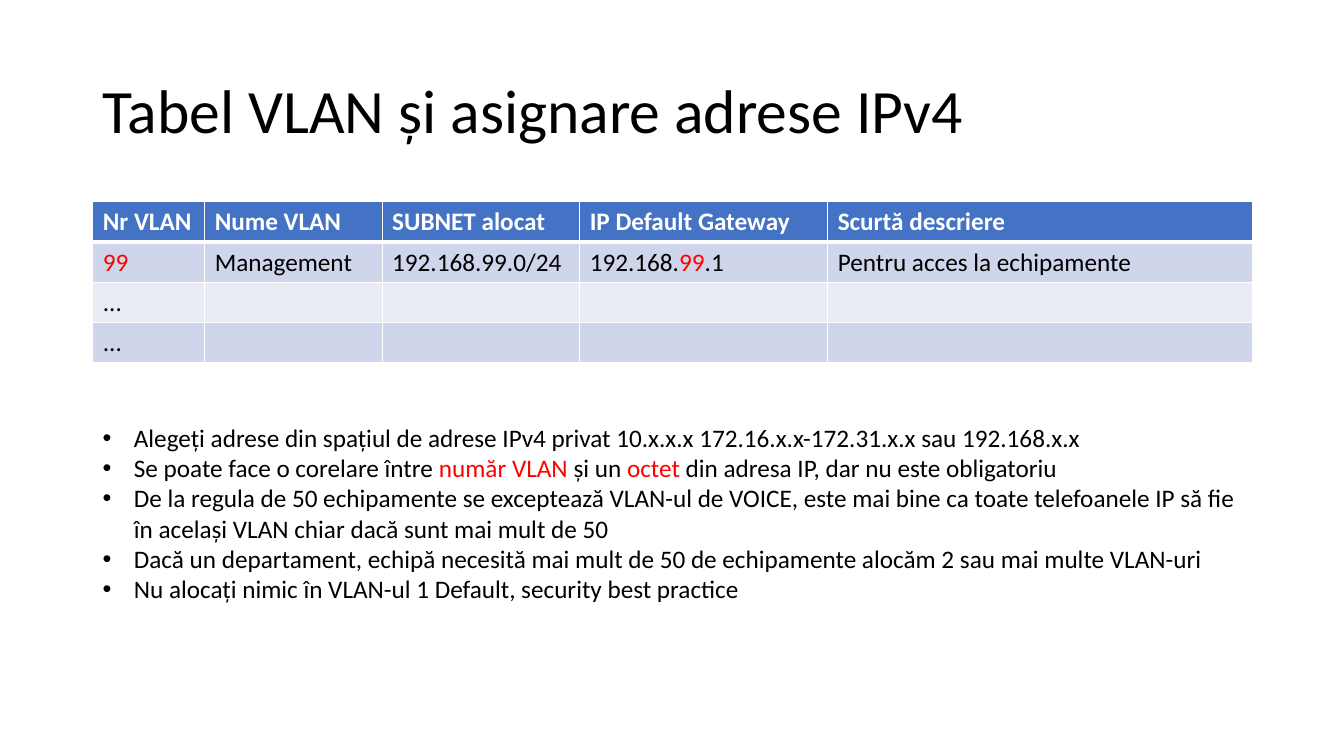
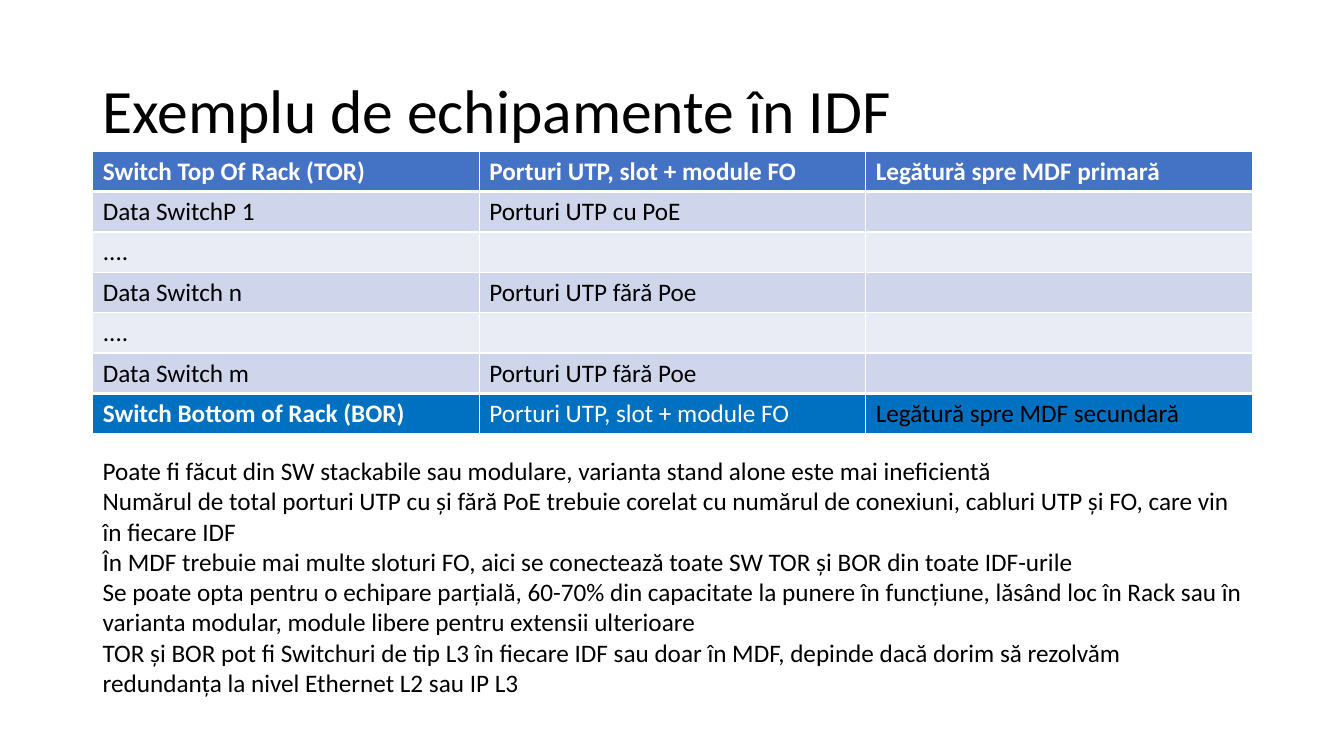
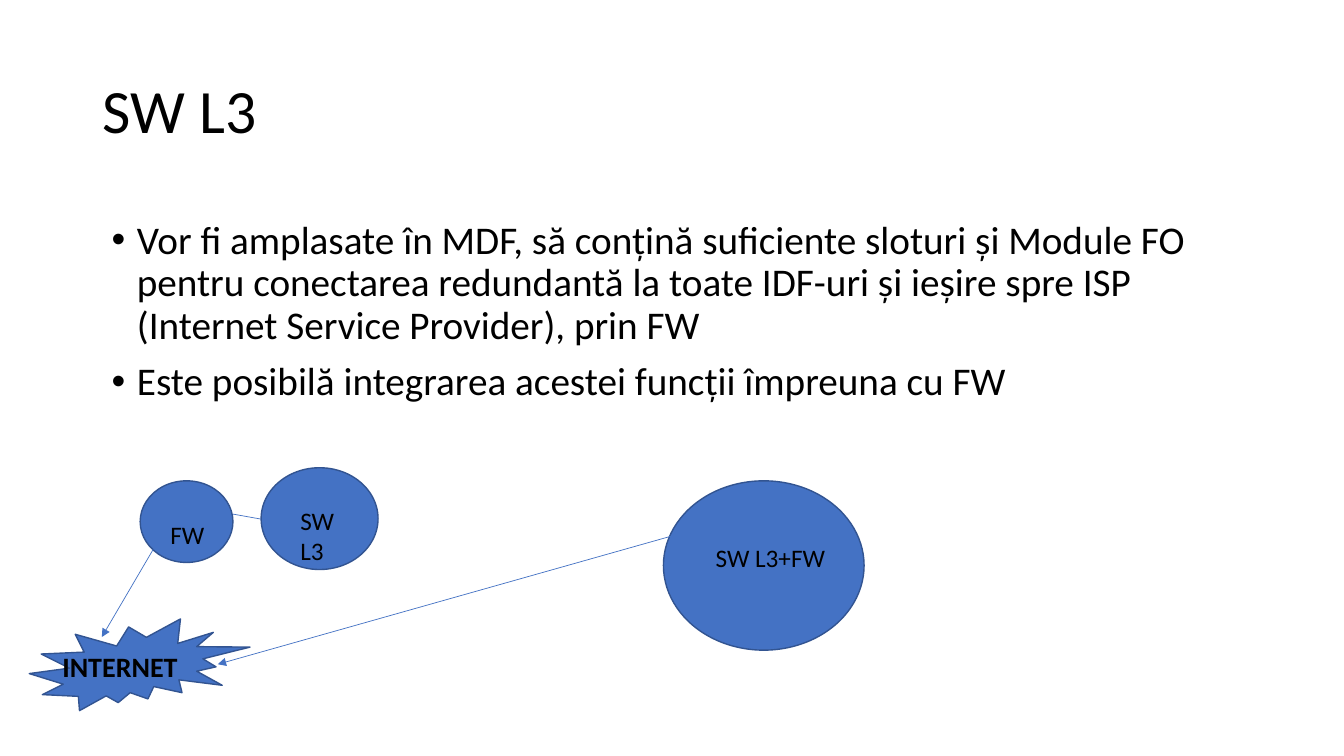
from lxml import etree
from pptx import Presentation
from pptx.dml.color import RGBColor
from pptx.enum import shapes, text
from pptx.oxml import ns
from pptx.util import Inches, Pt

# Shared style
FONT = "Calibri"
BLACK, WHITE, RED = "000000", "FFFFFF", "FF0000"
BLUE, DEEP_BLUE, OUTLINE = "4472C4", "0070C0", "325491"
BANDS = ("CFD5EA", "E9EBF5")
LEFT, WIDTH, ROW_H = 0.92, 11.5, 0.4

# Content: text between | marks is red
VLAN_COLS = [1.11, 1.76, 1.96, 2.46, 4.21]
VLAN_ROWS = [
    ["Nr VLAN", "Nume VLAN", "SUBNET alocat", "IP Default Gateway", "Scurtă descriere"],
    ["|99|", "Management", "192.168.99.0/24", "192.168.|99|.1", "Pentru acces la echipamente"],
    ["...", "", "", "", ""],
    ["...", "", "", "", ""],
]
VLAN_NOTES = [
    "Alegeți adrese din spațiul de adrese IPv4 privat 10.x.x.x 172.16.x.x-172.31.x.x sau 192.168.x.x",
    "Se poate face o corelare între |număr VLAN |și un |octet| din adresa IP, dar nu este obligatoriu",
    "De la regula de 50 echipamente se exceptează VLAN-ul de VOICE, este mai bine ca toate "
    "telefoanele IP să fie în același VLAN chiar dacă sunt mai mult de 50",
    "Dacă un departament, echipă necesită mai mult de 50 de echipamente alocăm 2 sau mai multe VLAN-uri",
    "Nu alocați nimic în VLAN-ul 1 Default, security best practice",
]
IDF_ROWS = [
    ["Switch Top Of Rack (TOR)", "Porturi UTP, slot + module FO", "Legătură spre MDF primară"],
    ["Data SwitchP 1", "Porturi UTP cu PoE", ""],
    ["....", "", ""],
    ["Data Switch n", "Porturi UTP fără Poe", ""],
    ["....", "", ""],
    ["Data Switch m", "Porturi UTP fără Poe", ""],
    ["Switch Bottom of Rack (BOR)", "Porturi UTP, slot + module FO", "Legătură spre MDF secundară"],
]
BOR_FONTS = [(WHITE, True), (WHITE, False), (BLACK, False)]
IDF_NOTES = [
    "Poate fi făcut din SW stackabile sau modulare, varianta stand alone este mai ineficientă",
    "Numărul de total porturi UTP cu și fără PoE trebuie corelat cu numărul de conexiuni, "
    "cabluri UTP și FO, care vin în fiecare IDF",
    "În MDF trebuie mai multe sloturi FO, aici se conectează toate SW TOR și BOR din toate IDF-urile",
    "Se poate opta pentru o echipare parțială, 60-70% din capacitate la punere în funcțiune, "
    "lăsând loc în Rack sau în varianta modular, module libere pentru extensii ulterioare",
    "TOR și BOR pot fi Switchuri de tip L3 în fiecare IDF sau doar în MDF, depinde dacă dorim "
    "să rezolvăm redundanța la nivel Ethernet L2 sau IP L3",
]
L3_NOTES = [
    "Vor fi amplasate în MDF, să conțină suficiente sloturi și Module FO pentru conectarea "
    "redundantă la toate IDF-uri și ieșire spre ISP (Internet Service Provider), prin FW",
    "Este posibilă integrarea acestei funcții împreuna cu FW",
]
OVAL, BURST = shapes.MSO_SHAPE.OVAL, shapes.MSO_SHAPE.EXPLOSION2
# Nodes: shape, its box, label, label box, size, bold
NODES = [
    (OVAL, (2.59, 4.64, 1.16, 1.01), "SW L3", (2.88, 4.96, 0.61, 0.71), 18, False),
    (OVAL, (1.39, 4.77, 0.92, 0.81), "FW", (1.59, 5.1, 0.72, 0.4), 18, False),
    (OVAL, (6.58, 4.77, 1.99, 1.68), "SW L3+FW", (7, 5.33, 1.57, 0.4), 18, False),
    (BURST, (0.29, 6.14, 2.19, 0.91), "INTERNET", (0.52, 6.39, 1.8, 0.45), 20, True),
]
# Links: start, end, arrowhead
LINKS = [
    ((2.31, 5.1, 2.59, 5.15), False),
    ((6.69, 5.31, 2.16, 6.59), True),
    ((1.52, 5.45, 1.01, 6.32), True),
]


def rgb(value):
    return RGBColor.from_string(value)


def inches(values):
    return [Inches(v) for v in values]


def write(p, marked, size=18, color=BLACK, bold=False):
    f = p.font
    f.name, f.size, f.bold = FONT, Pt(size), bold
    f.color.rgb = rgb(color)
    for i, part in enumerate(marked.split("|")):
        if part:
            r = p.add_run()
            r.text = part
            if i % 2:
                r.font.color.rgb = rgb(RED)


def add_bullet(p, indent):
    pPr = p._p.get_or_add_pPr()
    pPr.set("marL", str(Inches(indent)))
    pPr.set("indent", str(-Inches(indent)))
    defaults = pPr.find(ns.qn("a:defRPr"))
    for tag, key, value in (("a:buFont", "typeface", "Arial"), ("a:buChar", "char", "•")):
        mark = etree.Element(ns.qn(tag))
        mark.set(key, value)
        defaults.addprevious(mark)


def add_text(s, box, lines, size=18, bold=False, bullet=0, spacing=None, before=0, middle=False):
    tf = s.shapes.add_textbox(*inches(box)).text_frame
    tf.word_wrap = True
    if middle:
        tf.vertical_anchor = text.MSO_ANCHOR.MIDDLE
    for i, line in enumerate(lines):
        p = tf.add_paragraph() if i else tf.paragraphs[0]
        write(p, line, size, bold=bold)
        if spacing:
            p.line_spacing = spacing
        if before:
            p.space_before = Pt(before)
        if bullet:
            add_bullet(p, bullet)


def add_slide(prs, title):
    s = prs.slides.add_slide(prs.slide_layouts[6])
    add_text(s, (LEFT, 0.4, WIDTH, 1.45), [title], 44, spacing=0.9, middle=True)
    return s


def set_borders(cell, top, bottom):
    tcPr = cell._tc.get_or_add_tcPr()
    for i, (tag, width) in enumerate((("a:lnL", 1), ("a:lnR", 1), ("a:lnT", top), ("a:lnB", bottom))):
        ln = etree.Element(ns.qn(tag), w=str(Pt(width)))
        fill = etree.SubElement(ln, ns.qn("a:solidFill"))
        etree.SubElement(fill, ns.qn("a:srgbClr"), val=WHITE)
        tcPr.insert(i, ln)


def add_grid(s, top, widths, rows, footer_fonts=None):
    last = len(rows) - 1
    frame = s.shapes.add_table(len(rows), len(widths), *inches((LEFT, top, WIDTH, ROW_H * len(rows))))
    table = frame.table
    for col, width in zip(table.columns, widths):
        col.width = Inches(width)
    thick = {1, last} if footer_fonts else {1}  # heavy rules above these rows
    for y, row in enumerate(rows):
        table.rows[y].height = Inches(ROW_H)
        for x, value in enumerate(row):
            fill, color, bold = BANDS[(y - 1) % 2], BLACK, False
            if y == 0:
                fill, color, bold = BLUE, WHITE, True
            elif footer_fonts and y == last:
                fill = DEEP_BLUE
                color, bold = footer_fonts[x]
            cell = table.cell(y, x)
            cell.fill.solid()
            cell.fill.fore_color.rgb = rgb(fill)
            set_borders(cell, 3 if y in thick else 1, 3 if y + 1 in thick else 1)
            write(cell.text_frame.paragraphs[0], value, color=color, bold=bold)


def add_node(s, kind, box, label, label_box, size, bold):
    sp = s.shapes.add_shape(kind, *inches(box))
    sp.shadow.inherit = False
    sp.fill.solid()
    sp.fill.fore_color.rgb = rgb(BLUE)
    sp.line.color.rgb = rgb(OUTLINE)
    sp.line.width = Pt(1)
    add_text(s, label_box, [label], size, bold)


def add_link(s, ends, arrow):
    link = s.shapes.add_connector(shapes.MSO_CONNECTOR.STRAIGHT, *inches(ends))
    link.line.color.rgb = rgb(BLUE)
    link.line.width = Pt(0.5)
    if arrow:
        etree.SubElement(link.line._get_or_add_ln(), ns.qn("a:tailEnd"), type="triangle")
    etree.SubElement(link._element.spPr, ns.qn("a:effectLst"))


def main():
    prs = Presentation()
    prs.slide_width, prs.slide_height = inches((13.33, 7.5))

    # VLAN table
    s = add_slide(prs, "Tabel VLAN și asignare adrese IPv4")
    add_grid(s, 2, VLAN_COLS, VLAN_ROWS)
    add_text(s, (LEFT, 4.14, WIDTH, 1.92), VLAN_NOTES, bullet=0.31)

    # IDF equipment
    s = add_slide(prs, "Exemplu de echipamente în IDF")
    add_grid(s, 1.5, [WIDTH / 3] * 3, IDF_ROWS, BOR_FONTS)
    add_text(s, (LEFT, 4.47, WIDTH, 2.52), IDF_NOTES)

    # Layer 3 switch diagram
    s = add_slide(prs, "SW L3")
    add_text(s, (1.01, 2.14, WIDTH, 4.76), L3_NOTES, 28, bullet=0.25, spacing=0.9, before=10)
    for node in NODES:
        add_node(s, *node)
    for ends, arrow in LINKS:
        add_link(s, ends, arrow)

    prs.save("out.pptx")


if __name__ == "__main__":
    main()
